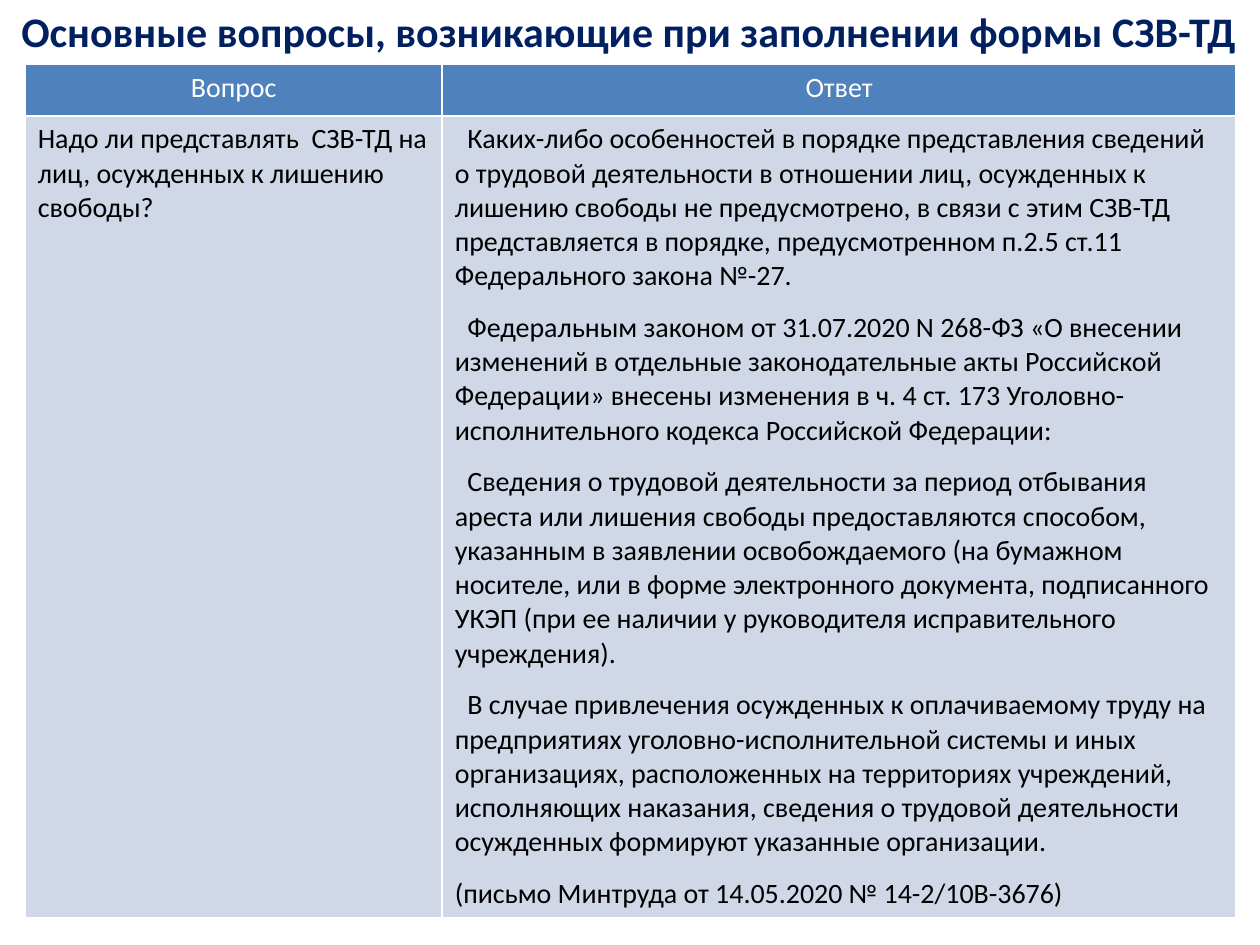
from pptx import Presentation
from pptx.dml.color import RGBColor
from pptx.enum.text import PP_ALIGN
from pptx.oxml.ns import qn
from pptx.util import Inches, Pt

CENTER, LEFT = PP_ALIGN.CENTER, PP_ALIGN.LEFT
FONT = "Calibri"
NAVY, BLUE, PALE, WHITE, BLACK = "002060", "4F81BD", "D0D8E8", "FFFFFF", "000000"
NO_STYLE_NO_GRID = "{2D5ABB26-0587-4C30-8999-92F81FD0307C}"

TITLE = "Основные вопросы, возникающие при заполнении формы СЗВ-ТД"
HEADERS = ["Вопрос", "Ответ"]
QUESTION = "Надо ли представлять  СЗВ-ТД на лиц, осужденных к лишению свободы?"
ANSWER = [
    "Каких-либо особенностей в порядке представления сведений о трудовой "
    "деятельности в отношении лиц, осужденных к лишению свободы не "
    "предусмотрено, в связи с этим СЗВ-ТД представляется в порядке, "
    "предусмотренном п.2.5 ст.11 Федерального закона №-27.",
    "Федеральным законом от 31.07.2020 N 268-ФЗ «О внесении изменений в "
    "отдельные законодательные акты Российской Федерации» внесены изменения "
    "в ч. 4 ст. 173 Уголовно-исполнительного кодекса Российской Федерации:",
    "Сведения о трудовой деятельности за период отбывания ареста или лишения "
    "свободы предоставляются способом, указанным в заявлении освобождаемого "
    "(на бумажном носителе, или в форме электронного документа, подписанного "
    "УКЭП (при ее наличии у руководителя исправительного учреждения).",
    "В случае привлечения осужденных к оплачиваемому труду на предприятиях "
    "уголовно-исполнительной системы и иных организациях, расположенных на "
    "территориях учреждений, исполняющих наказания, сведения о трудовой "
    "деятельности осужденных формируют указанные организации.",
]
SOURCE = "(письмо Минтруда от 14.05.2020 № 14-2/10В-3676)"


def rgb(value):
    return RGBColor.from_string(value)


def add_grid(s, left, top, cols, rows):
    """Add a table whose size follows from its column widths and row heights."""
    frame = s.shapes.add_table(len(rows), len(cols), Inches(left), Inches(top),
                               Inches(sum(cols)), Inches(sum(rows)))
    table = frame.table
    for col, width in zip(table.columns, cols):
        col.width = Inches(width)
    for row, height in zip(table.rows, rows):
        row.height = Inches(height)
    return table


def fill_cell(cell, fill):
    if fill:
        cell.fill.solid()
        cell.fill.fore_color.rgb = rgb(fill)
    else:
        cell.fill.background()


def write_cell(cell, texts, color, size=16, bold=False, align=LEFT, after=0, indents=()):
    tf = cell.text_frame
    for i, text in enumerate(texts):
        p = tf.add_paragraph() if i else tf.paragraphs[0]
        p.alignment = align
        p.space_after = Pt(after)
        if i < len(indents):
            pPr = p._p.get_or_add_pPr()
            pPr.set("marL", "0")
            pPr.set("indent", str(Inches(indents[i])))
        r = p.add_run()
        r.text = text
        r.font.name = FONT
        r.font.size = Pt(size)
        r.font.bold = bold
        r.font.color.rgb = rgb(color)


def add_questions(s):
    table = add_grid(s, 0.2, 0.51, [3.31, 6.3], [0.41, 6.26])
    for col, header in enumerate(HEADERS):
        cell = table.cell(0, col)
        fill_cell(cell, BLUE)
        write_cell(cell, [header], WHITE, align=CENTER)
        fill_cell(table.cell(1, col), PALE)
    write_cell(table.cell(1, 0), [QUESTION], BLACK)
    write_cell(table.cell(1, 1), ANSWER + [SOURCE], BLACK, after=10,
               indents=[0.1] * len(ANSWER))


def add_title(s):
    table = add_grid(s, 0.05, 0.01, [9.88], [0.71])
    table.first_row = table.horz_banding = False
    table._tbl.tblPr.find(qn("a:tableStyleId")).text = NO_STYLE_NO_GRID
    cell = table.cell(0, 0)
    fill_cell(cell, None)
    write_cell(cell, [TITLE], NAVY, size=24, bold=True, align=CENTER)


def main():
    prs = Presentation()
    prs.slide_width, prs.slide_height = Inches(10), Inches(7.5)
    s = prs.slides.add_slide(prs.slide_layouts[6])
    add_questions(s)
    add_title(s)
    prs.save("out.pptx")


if __name__ == "__main__":
    main()
